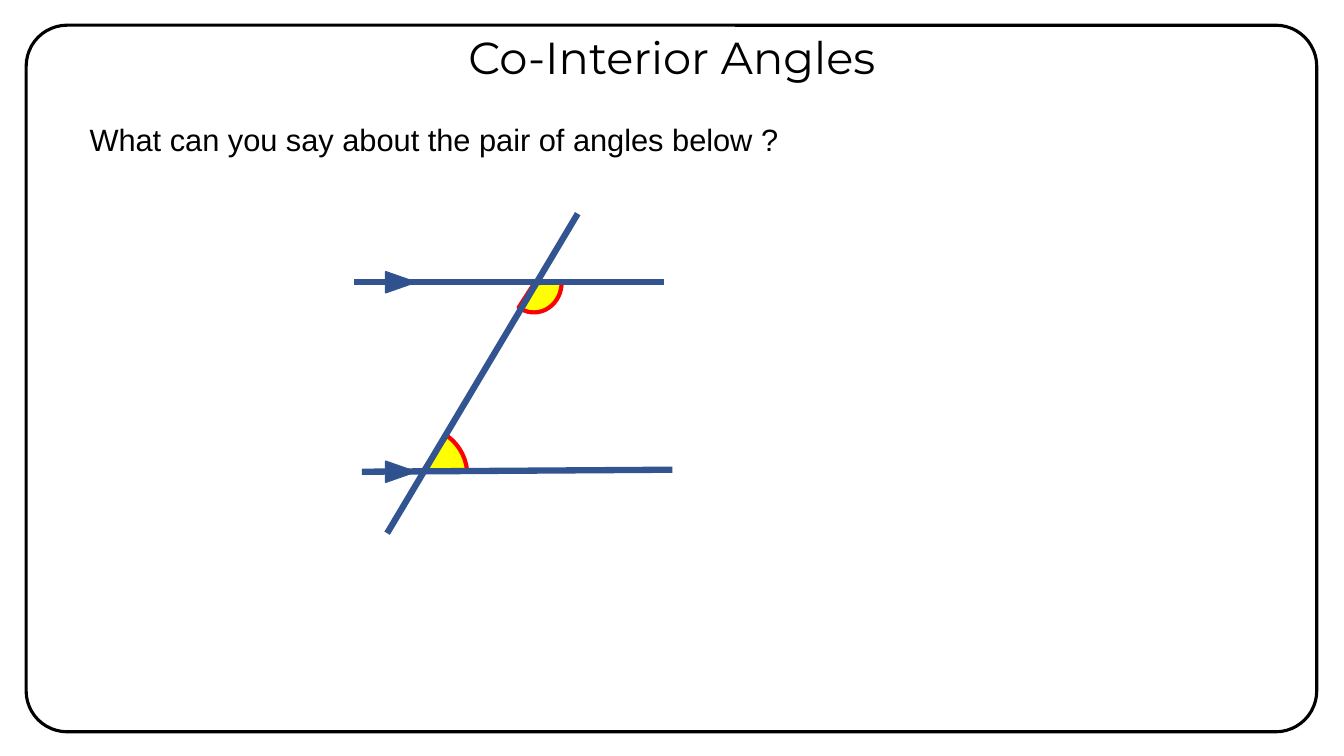
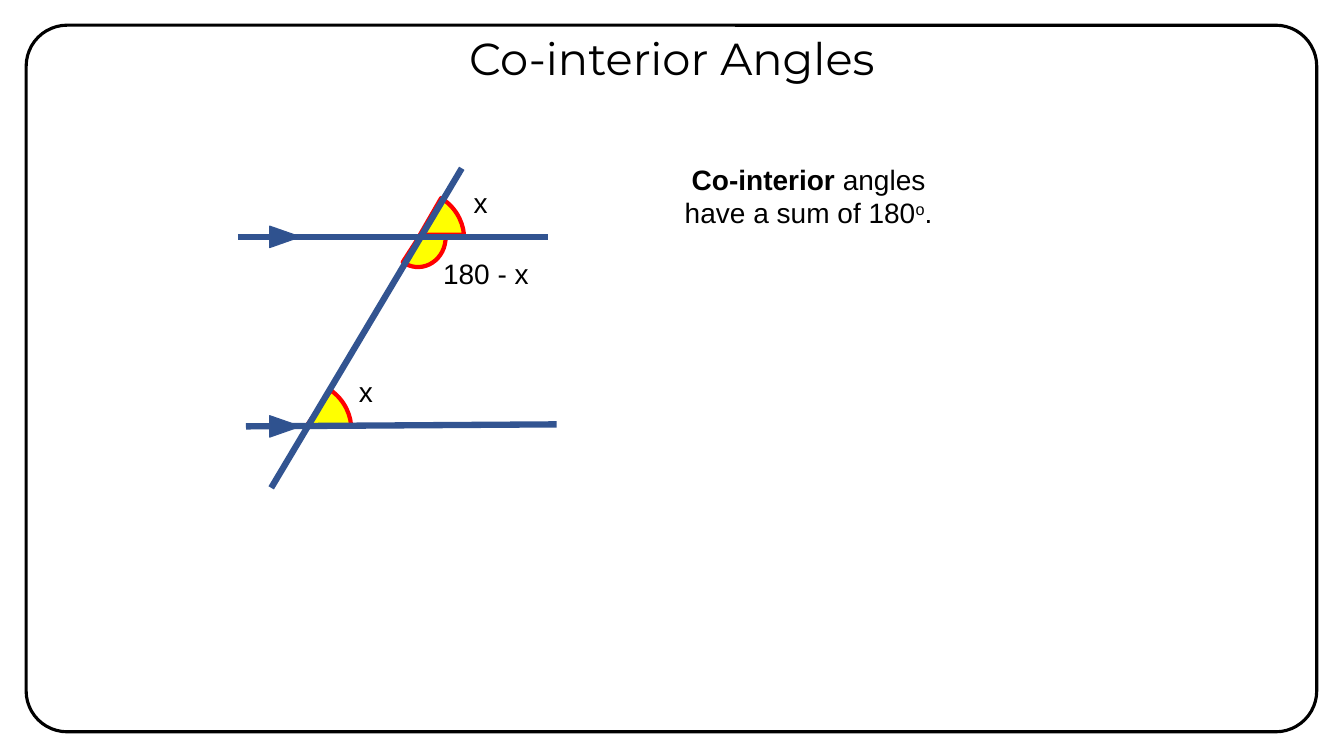
"""Build two slides about co-interior angles between parallel lines."""
from lxml.etree import SubElement
from pptx import Presentation
from pptx.dml.color import RGBColor
from pptx.enum.shapes import MSO_CONNECTOR, MSO_SHAPE
from pptx.enum.text import PP_ALIGN
from pptx.oxml.ns import qn
from pptx.util import Inches, Pt

BLACK, WHITE, YELLOW, RED = "000000", "FFFFFF", "FFFF00", "FF0000"
LINE_BLUE, ARROW_BLUE = "325491", "2F528F"

LINES = [((3.51, 2.8), (6.59, 2.8)), ((3.59, 4.68), (6.67, 4.66)), ((3.84, 5.29), (5.73, 2.12))]
ARROWS = [(3.87, 2.65, 0.21, 0.3), (3.87, 4.53, 0.21, 0.3)]
ANGLES = {
    "lower": dict(box=(3.74, 4.25, 0.91, 0.84), rotation=42.9, start=43.06, end=98.59),
    "upper": dict(box=(5.01, 2.54, 0.58, 0.54), rotation=95.8, start=333.04, end=98.59),
    "corresponding": dict(box=(4.86, 2.36, 0.91, 0.84), rotation=42.9, start=43.06, end=102.89),
}

SLIDES = [
    dict(
        title="Co-Interior Angles", title_top=0.25, offset=(0, 0), angles=["lower", "upper"],
        texts=[dict(text="What can you say about the pair of angles below ?", box=(0.79, 1.15, 7.37, 0.47),
                    size=22, align=PP_ALIGN.LEFT, fill=WHITE)],
    ),
    dict(
        title="Co-interior Angles", title_top=0.26, offset=(-1.15, -0.45),
        angles=["lower", "upper", "corresponding"],
        texts=[
            dict(text=[("Co-interior", "bold"), (" angles have a sum of 180", ""), ("o", "superscript"), (".", "")],
                 box=(6.67, 1.56, 2.7, 0.77), fill=WHITE),
            dict(text="x", box=(3.46, 3.67, 0.25, 0.44)),
            dict(text="180 - x", box=(4.23, 2.5, 1.18, 0.44)),
            dict(text="x", box=(4.6, 1.79, 0.25, 0.44)),
        ],
    ),
]


def color(value):
    return RGBColor.from_string(value)


def add_filled_shape(slide, kind, box, fill, line, width):
    shape = slide.shapes.add_shape(kind, *map(Inches, box))
    shape.shadow.inherit = False
    shape.fill.solid()
    shape.fill.fore_color.rgb = color(fill)
    shape.line.color.rgb = color(line)
    shape.line.width = Pt(width)
    return shape


def add_text(slide, text, box, size=20, font="Arial", align=PP_ALIGN.CENTER, fill=None):
    shape = slide.shapes.add_textbox(*map(Inches, box))
    if fill:
        shape.fill.solid()
        shape.fill.fore_color.rgb = color(fill)
    shape.text_frame.word_wrap = True
    paragraph = shape.text_frame.paragraphs[0]
    paragraph.alignment = align
    for content, style in [(text, "")] if isinstance(text, str) else text:
        run = paragraph.add_run()
        run.text = content
        run.font.name, run.font.size = font, Pt(size)
        run.font.bold = style == "bold"
        run.font.color.rgb = color(BLACK)
        if style == "superscript":
            run.font._element.set("baseline", "30000")


def add_line(slide, start, end):
    line = slide.shapes.add_connector(MSO_CONNECTOR.STRAIGHT, *map(Inches, (*start, *end)))
    line.line.color.rgb = color(LINE_BLUE)
    line.line.width = Pt(4.5)
    SubElement(line._element.spPr, qn("a:effectLst"))


def add_angle(slide, box, rotation, start, end):
    sector = add_filled_shape(slide, MSO_SHAPE.PIE, box, YELLOW, RED, 3)
    sector.rotation = rotation
    sector._element.spPr.get_or_add_xfrm().set("flipV", "1")
    for index, degrees in enumerate((start, end)):
        sector.adjustments[index] = degrees * 0.6


def add_diagram(slide, angles, offset):
    def move(point):
        return point[0] + offset[0], point[1] + offset[1], *point[2:]

    for name in angles:
        angle = ANGLES[name]
        add_angle(slide, **{**angle, "box": move(angle["box"])})
    for start, end in LINES:
        add_line(slide, move(start), move(end))
    for box in ARROWS:
        arrow = add_filled_shape(slide, MSO_SHAPE.ISOSCELES_TRIANGLE, move(box), ARROW_BLUE, LINE_BLUE, 1)
        arrow.rotation = 90


def add_slide(presentation, content):
    slide = presentation.slides.add_slide(presentation.slide_layouts[6])
    frame = add_filled_shape(slide, MSO_SHAPE.ROUNDED_RECTANGLE, (0.26, 0.25, 12.8, 7.01), WHITE, BLACK, 2.25)
    frame.adjustments[0] = 0.058
    add_diagram(slide, content["angles"], content["offset"])
    add_text(slide, content["title"], (3.98, content["title_top"], 5.37, 0.64), size=32, font="Montserrat")
    for text in content["texts"]:
        add_text(slide, **text)


def main():
    presentation = Presentation()
    presentation.slide_width, presentation.slide_height = Inches(13.33), Inches(7.5)
    for content in SLIDES:
        add_slide(presentation, content)
    presentation.save("out.pptx")


if __name__ == "__main__":
    main()
